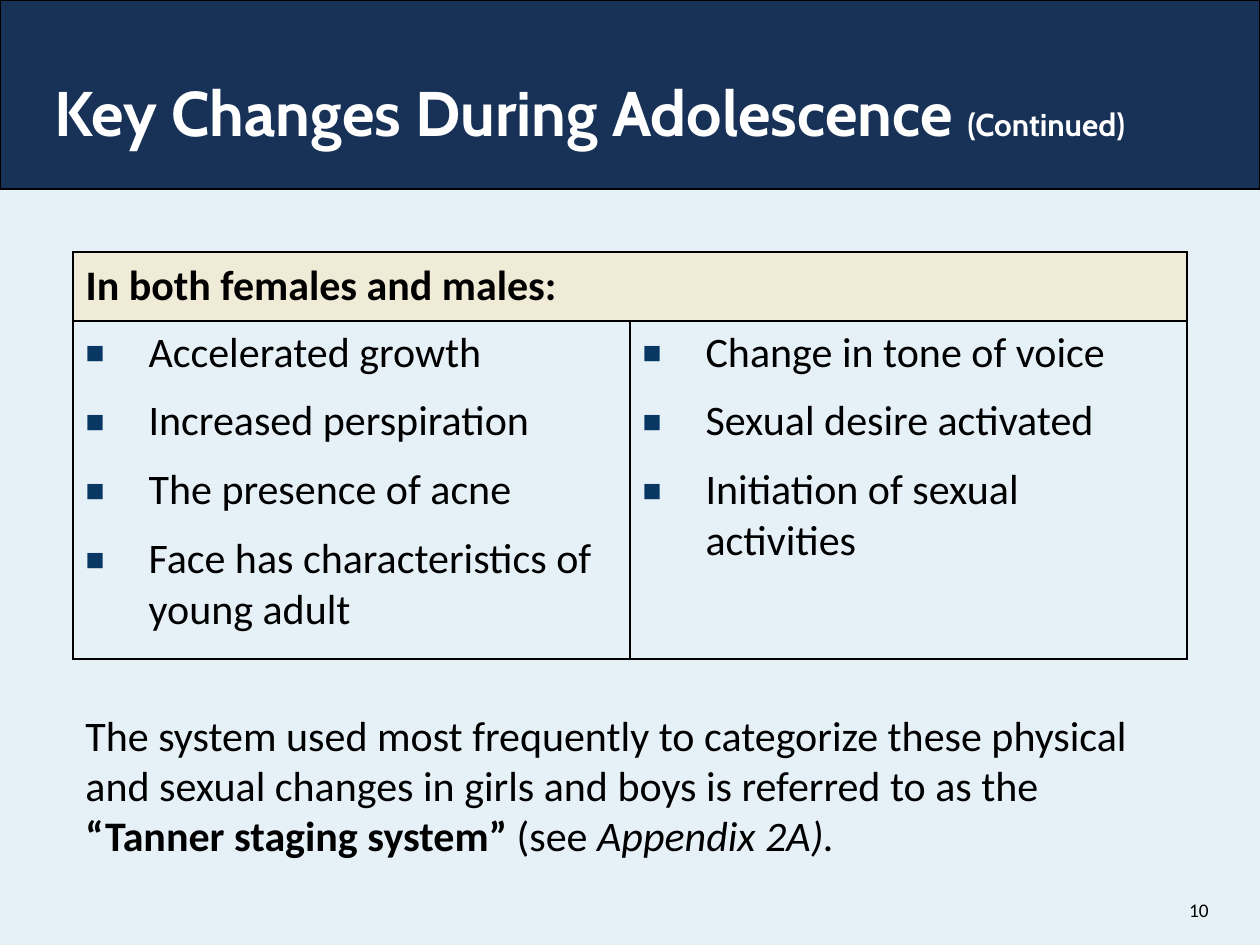
from lxml import etree
from pptx import Presentation
from pptx.dml.color import RGBColor
from pptx.enum.shapes import MSO_SHAPE
from pptx.enum.text import MSO_ANCHOR as Anchor, MSO_AUTO_SIZE as AutoSize, PP_ALIGN as Align
from pptx.oxml import parse_xml
from pptx.oxml.ns import nsdecls
from pptx.util import Emu, Pt

SCALE = 914400 / 126  # EMU in one px
NAVY, PALE, CREAM, BLACK, WHITE = "173157", "E5F0F7", "F0EBD6", "000000", "FFFFFF"
BULLET = "083763"


def color(value):
    return RGBColor.from_string(value)


def add_span(para, text, size=24, font="Calibri", fill=BLACK, bold=False, italic=False):
    span = para.add_run()
    span.text = text
    span.font.size, span.font.name = Pt(size), font
    span.font.bold, span.font.italic = bold, italic
    span.font.color.rgb = color(fill)


deck = Presentation()
deck.slide_width, deck.slide_height = Emu(9144000), Emu(6858000)
page = deck.slides.add_slide(deck.slide_layouts[5])
page.background.fill.solid()
page.background.fill.fore_color.rgb = color(PALE)

# Header band, behind the title
band = page.shapes.add_shape(MSO_SHAPE.RECTANGLE, 0, 0, deck.slide_width, Emu(int(189 * SCALE)))
band.shadow.inherit = False
band.fill.solid()
band.fill.fore_color.rgb = color(NAVY)
band.line.color.rgb = color(BLACK)
band.line.width = Pt(0.75)
page.shapes._spTree.insert(2, band._element)

# Title
title = page.shapes.title
title.left, title.top, title.width, title.height = [Emu(int(v * SCALE)) for v in (42, 67, 1166, 154)]
frame = title.text_frame
frame.auto_size, frame.vertical_anchor = AutoSize.NONE, Anchor.TOP
para = frame.paragraphs[0]
para.alignment = Align.LEFT
add_span(para, "Key Changes During Adolescence ", 36, "Cabin", WHITE, bold=True)
add_span(para, "(Continued)", 18, "Cabin", WHITE, bold=True)

# Table of changes
header = "In both females and males:"
columns = [
    ["Accelerated growth", "Increased perspiration", "The presence of acne",
     "Face has characteristics of young adult"],
    ["Change in tone of voice", "Sexual desire activated", "Initiation of sexual activities"],
]
table = page.shapes.add_table(2, 2, *[Emu(int(v * SCALE)) for v in (73, 252, 1114, 407)]).table
for row, height in zip(table.rows, (69, 338)):
    row.height = Emu(int(height * SCALE))

head = table.cell(0, 0)
head.merge(table.cell(0, 1))
head.vertical_anchor = Anchor.MIDDLE
add_span(head.text_frame.paragraphs[0], header, bold=True)

for index, items in enumerate(columns):
    frame = table.cell(1, index).text_frame
    for number, item in enumerate(items):
        para = frame.add_paragraph() if number else frame.paragraphs[0]
        para.space_before = Pt(10)
        add_span(para, item)
        props = para._p.get_or_add_pPr()
        props.set("marL", "457200")
        props.set("indent", "-457200")
        for bullet in (f'<a:buClr {nsdecls("a")}><a:srgbClr val="{BULLET}"/></a:buClr>',
                       f'<a:buSzPct {nsdecls("a")} val="75000"/>',
                       f'<a:buFont {nsdecls("a")} typeface="Arial"/>',
                       f'<a:buChar {nsdecls("a")} char="■"/>'):
            props.append(parse_xml(bullet))

# Cell fills and borders
for row, fill in enumerate((CREAM, PALE)):
    for column in range(2):
        cell = table.cell(row, column)
        cell.fill.solid()
        cell.fill.fore_color.rgb = color(fill)
        for place, side in enumerate(("lnL", "lnR", "lnT", "lnB")):
            cell._tc.tcPr.insert(place, parse_xml(
                f'<a:{side} {nsdecls("a")} w="12700"><a:solidFill>'
                f'<a:srgbClr val="{BLACK}"/></a:solidFill></a:{side}>'))

# Closing note
note = page.shapes.add_textbox(*[Emu(int(v * SCALE)) for v in (73, 703, 1114, 165)])
note.text_frame.word_wrap = True
para = note.text_frame.paragraphs[0]
add_span(para, "The system used most frequently to categorize these physical and sexual "
               "changes in girls and boys is referred to as the ")
add_span(para, "“Tanner staging system” ", bold=True)
add_span(para, "(see ")
add_span(para, "Appendix 2A).", italic=True)

# Page number
number_box = page.shapes.add_textbox(*[Emu(int(v * SCALE)) for v in (1144, 885, 77, 50)])
number_box.text_frame.vertical_anchor = Anchor.MIDDLE
number_box.text_frame.word_wrap = True
para = number_box.text_frame.paragraphs[0]
para.alignment = Align.RIGHT
add_span(para, "10", 11)

deck.save("out.pptx")
